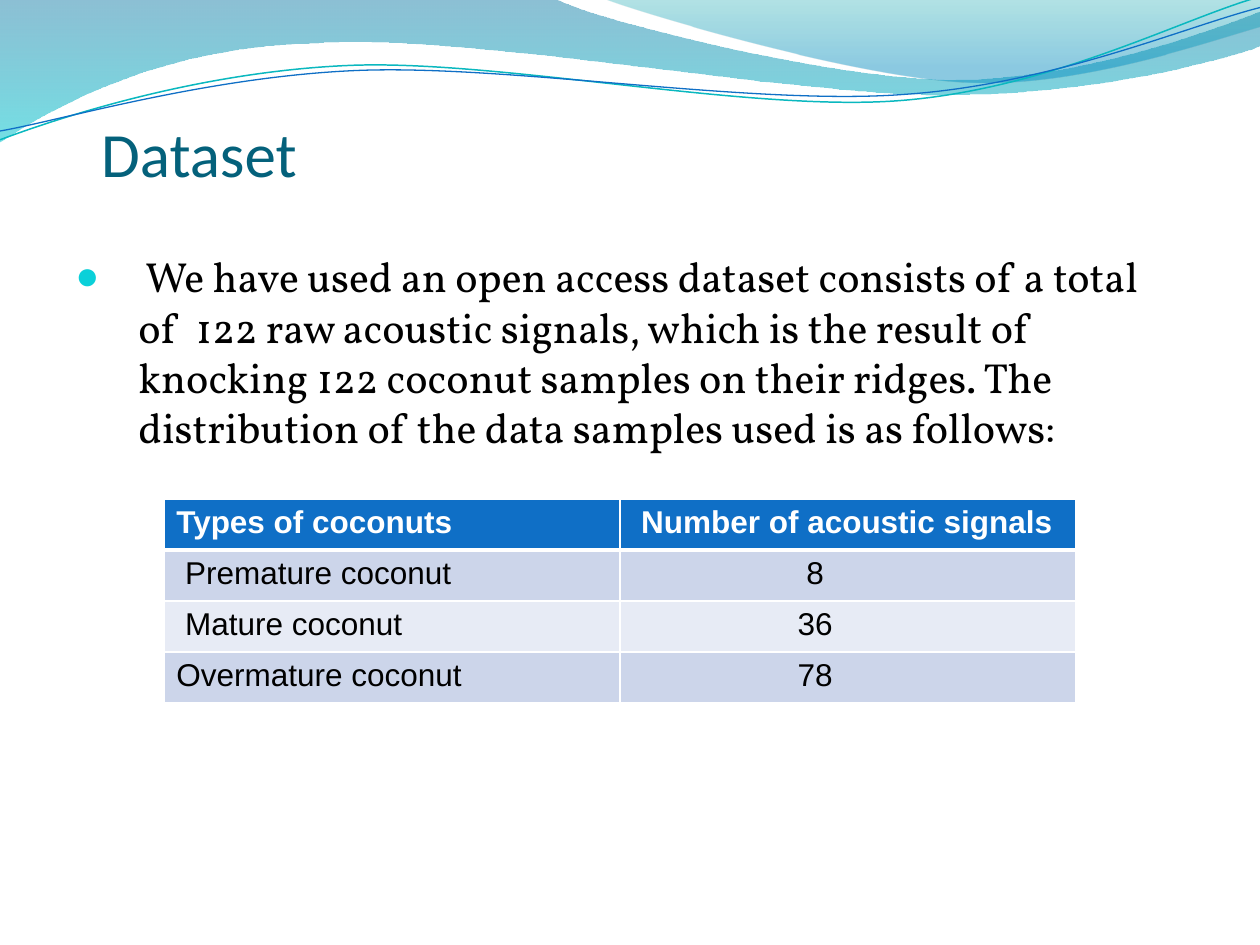
"""Build the Dataset slide with its wave header, summary text and coconut table."""
from lxml import etree
from pptx import Presentation
from pptx.dml.color import RGBColor
from pptx.enum.text import PP_ALIGN
from pptx.oxml import parse_xml
from pptx.oxml.ns import nsdecls, qn
from pptx.util import Inches, Pt

CENTER = PP_ALIGN.CENTER
LEFT = PP_ALIGN.LEFT
TITLE_TEAL = RGBColor(0x04, 0x61, 0x7B)
BLACK = RGBColor(0, 0, 0)
WHITE = RGBColor(0xFF, 0xFF, 0xFF)
HEADER_BLUE = RGBColor(0x0F, 0x6F, 0xC6)
LINE_TEAL = RGBColor(0x0A, 0xB8, 0xBF)
BULLET_CYAN = RGBColor(0x0B, 0xD0, 0xD9)
BAND_DARK = RGBColor(0xCC, 0xD5, 0xEA)
BAND_LIGHT = RGBColor(0xE7, 0xEB, 0xF5)
WAVE_BLUE = RGBColor(0x00, 0x74, 0xA1)
WAVE_CYAN = RGBColor(0x00, 0xC6, 0xCF)
CREST_TEAL = RGBColor(0x00, 0xA1, 0xA9)
CREST_BLUE = RGBColor(0x00, 0x8B, 0xBF)


def add_outline(slide, segments, closed):
    """Draw straight (2 numbers) and Bezier (6 numbers) segments in inches."""
    anchors = [(Inches(segment[-2]), Inches(segment[-1])) for segment in segments]
    builder = slide.shapes.build_freeform(*anchors[0])
    builder.add_line_segments(anchors[1:], close=closed)
    shape = builder.convert_to_shape()
    shape.shadow.inherit = False
    straight_parts = list(shape.element.iter(qn("a:lnTo")))
    for part, segment in zip(straight_parts, segments[1:]):
        if len(segment) == 6:
            curve = etree.Element(qn("a:cubicBezTo"))
            for x, y in zip(segment[::2], segment[1::2]):
                etree.SubElement(
                    curve, qn("a:pt"),
                    x=str(Inches(x) - shape.left), y=str(Inches(y) - shape.top),
                )
            part.getparent().replace(part, curve)
    return shape


def format_text(paragraph, font_name, size, color, bold=False):
    """Apply one font setting to every run."""
    for run in paragraph.runs:
        run.font.name = font_name
        run.font.size = Pt(size)
        run.font.color.rgb = color
        run.font.bold = bold


presentation = Presentation()
presentation.slide_width = Inches(10)
presentation.slide_height = Inches(7.5)
slide = presentation.slides.add_slide(presentation.slide_layouts[6])

wave = [
    (0, 0), (4.4, -0.01),
    (4.76, 0.17, 6.64, 0.63, 7.58, 0.63),
    (8.53, 0.63, 9.58, 0.26, 10, 0.09),
    (10.01, 0.36),
    (9.83, 0.44, 8.7, 0.76, 7.46, 0.75),
    (6.22, 0.75, 3.82, 0.28, 2.57, 0.34),
    (1.29, 0.36, 0.46, 0.83, -0.01, 1.13),
]
crest = [
    (4.79, -0.01),
    (5.09, 0.11, 6.82, 0.62, 7.69, 0.65),
    (8.56, 0.69, 9.61, 0.32, 10, 0.21),
    (10, 0),
]
for segments, stops in (
    (wave, [(0, WAVE_BLUE, 45), (1, WAVE_CYAN, 55)]),
    (crest, [(0, CREST_TEAL, 30), (0.8, CREST_BLUE, 45)]),
):
    shape = add_outline(slide, segments, True)
    shape.line.fill.background()
    shape.fill.gradient()
    shape.fill.gradient_angle = 270
    for stop, (position, color, opacity) in zip(shape.fill.gradient_stops, stops):
        stop.position = position
        stop.color.rgb = color
    color_elements = shape.element.spPr.findall(".//" + qn("a:gs") + "/" + qn("a:srgbClr"))
    for element, (position, color, opacity) in zip(color_elements, stops):
        etree.SubElement(element, qn("a:alpha"), val=str(opacity * 1000))

teal_line = [
    (0, 1.11),
    (0.48, 0.93, 1.58, 0.57, 2.77, 0.52),
    (3.95, 0.47, 5.93, 0.89, 7.13, 0.8),
    (8.33, 0.71, 9.38, 0.15, 9.98, -0.02),
]
blue_line = [
    (0, 1.04),
    (0.47, 0.96, 1.64, 0.61, 2.83, 0.56),
    (4.03, 0.51, 5.97, 0.84, 7.17, 0.75),
    (8.36, 0.67, 9.41, 0.21, 10, 0.06),
]
for segments, color, width in ((teal_line, LINE_TEAL, 0.85), (blue_line, HEADER_BLUE, 0.75)):
    shape = add_outline(slide, segments, False)
    shape.fill.background()
    shape.line.color.rgb = color
    shape.line.width = Pt(width)

title = slide.shapes.add_textbox(Inches(0.69), Inches(0.91), Inches(9), Inches(0.61))
title_frame = title.text_frame
title_frame.word_wrap = True
title_frame.margin_left = title_frame.margin_right = 0
title_frame.margin_top = title_frame.margin_bottom = 0
title_frame.text = " Dataset"
format_text(title_frame.paragraphs[0], "Calibri", 36, TITLE_TEAL)

body = slide.shapes.add_textbox(Inches(0.5), Inches(1.94), Inches(9), Inches(4.08))
body.text_frame.word_wrap = True
body.text_frame.text = (
    " We have used an open access dataset consists of a total of  122 raw acoustic "
    "signals, which is the result of knocking 122 coconut samples on their ridges. "
    "The distribution of the data samples used is as follows:"
)
paragraph = body.text_frame.paragraphs[0]
format_text(paragraph, "Vollkorn", 24, BLACK)
properties = paragraph._p.get_or_add_pPr()
properties.set("marL", str(Inches(0.5)))
properties.set("indent", str(-Inches(0.5)))
bullet_color = etree.SubElement(properties, qn("a:buClr"))
etree.SubElement(bullet_color, qn("a:srgbClr"), val=str(BULLET_CYAN))
etree.SubElement(properties, qn("a:buSzPct"), val="95000")
etree.SubElement(properties, qn("a:buFont"), typeface="Arial")
etree.SubElement(properties, qn("a:buChar"), char="●")

rows = [
    ("Types of coconuts", " Number of acoustic signals"),
    (" Premature coconut", "8"),
    (" Mature coconut", "36"),
    ("Overmature coconut", "78"),
]
row_fills = [HEADER_BLUE, BAND_DARK, BAND_LIGHT, BAND_DARK]
table = slide.shapes.add_table(
    len(rows), 2, Inches(1.3), Inches(3.96), Inches(7.24), Inches(1.62)
).table
for row_index, values in enumerate(rows):
    header = row_index == 0
    for column_index, value in enumerate(values):
        cell = table.cell(row_index, column_index)
        is_count = column_index == 1 and not header
        cell.text = value
        cell.margin_right = Inches(0.62 if is_count else 0.1)
        cell.fill.solid()
        cell.fill.fore_color.rgb = row_fills[row_index]
        paragraph = cell.text_frame.paragraphs[0]
        paragraph.alignment = CENTER if is_count else LEFT
        format_text(paragraph, "Arial", 18, WHITE if header else BLACK, header)
        widths = {"L": 1, "R": 1, "T": 3 if row_index == 1 else 1, "B": 3 if header else 1}
        for position, (side, width) in enumerate(widths.items()):
            border = parse_xml(
                f'<a:ln{side} {nsdecls("a")} w="{Pt(width)}"><a:solidFill>'
                f'<a:srgbClr val="{WHITE}"/></a:solidFill></a:ln{side}>'
            )
            cell._tc.get_or_add_tcPr().insert(position, border)

presentation.save("out.pptx")
